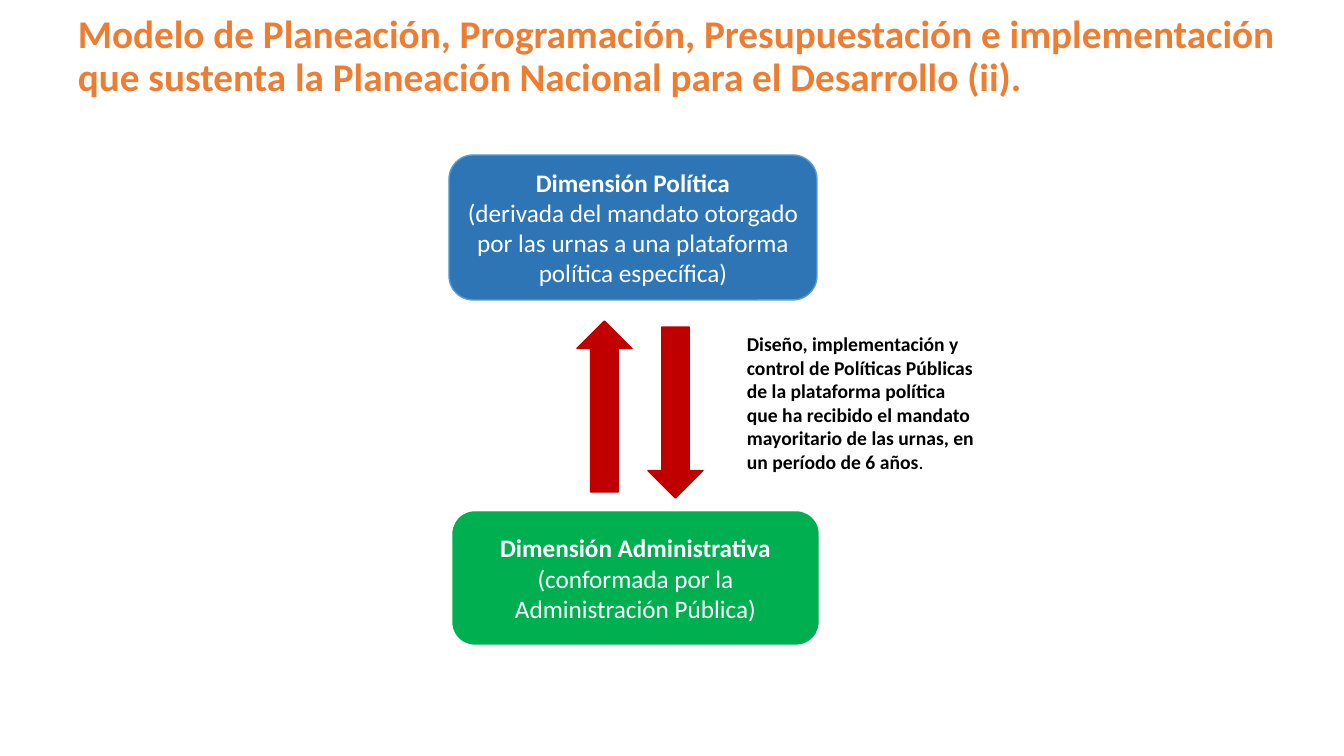
from pptx import Presentation
from pptx import util as u
from pptx.dml.color import RGBColor
from pptx.enum import shapes, text

PX = 914400 / 100.8


def px(*lengths):
    return [u.Emu(round(n * PX)) for n in lengths]


def write(shape, paragraphs, size=18, color="FFFFFF", align="LEFT", anchor="TOP", spacing=None):
    frame = shape.text_frame
    frame.word_wrap = True
    frame.vertical_anchor = getattr(text.MSO_ANCHOR, anchor)
    for i, runs in enumerate(paragraphs):
        paragraph = frame.paragraphs[0] if i == 0 else frame.add_paragraph()
        paragraph.alignment = getattr(text.PP_ALIGN, align)
        paragraph.line_spacing = spacing
        for words, bold in runs:
            run = paragraph.add_run()
            run.text = words
            run.font.name = "Calibri"
            run.font.size = u.Pt(size)
            run.font.bold = bold
            run.font.color.rgb = RGBColor.from_string(color)


deck = Presentation()
deck.slide_width, deck.slide_height = px(1344, 756)
slide = deck.slides.add_slide(deck.slide_layouts[6])

title = slide.shapes.add_textbox(*px(68, 10, 1218, 145))
write(title, [[("Modelo de Planeación, Programación, Presupuestación e implementación "
                "que sustenta la Planeación Nacional para el Desarrollo (ii).", True)]],
      size=28, color="ED7D31", spacing=0.9)

political = [[("Dimensión Política", True)],
             [("(derivada del mandato otorgado por las urnas a una plataforma política específica)", False)]]
administrative = [[("Dimensión Administrativa ", True),
                   ("(conformada por la Administración Pública)", False)]]

for kind, box, fill, line, rotation, paragraphs in [
    ("ROUNDED_RECTANGLE", (449, 155, 368, 145), "2E75B6", "5B9BD5", 0, political),
    ("ROUNDED_RECTANGLE", (453, 512, 365, 132), "00B050", "00B050", 0, administrative),
    ("UP_ARROW", (577, 321, 55, 171), "C00000", "C00000", 0, []),
    ("UP_ARROW", (648, 327, 55, 171), "C00000", "C00000", 180, []),
]:
    part = slide.shapes.add_shape(getattr(shapes.MSO_SHAPE, kind), *px(*box))
    part.shadow.inherit = False
    part.rotation = rotation
    part.fill.solid()
    part.fill.fore_color.rgb = RGBColor.from_string(fill)
    part.line.color.rgb = RGBColor.from_string(line)
    part.line.width = u.Pt(1)
    write(part, paragraphs, align="CENTER", anchor="MIDDLE")

policy_note = slide.shapes.add_textbox(*px(737, 327, 252, 152))
write(policy_note, [[("Diseño, implementación y control de Políticas Públicas de la plataforma política "
                      "que ha recibido el mandato mayoritario de las urnas, en un período de 6 años", True),
                     (".", False)]], size=14, color="000000")

deck.save("out.pptx")
